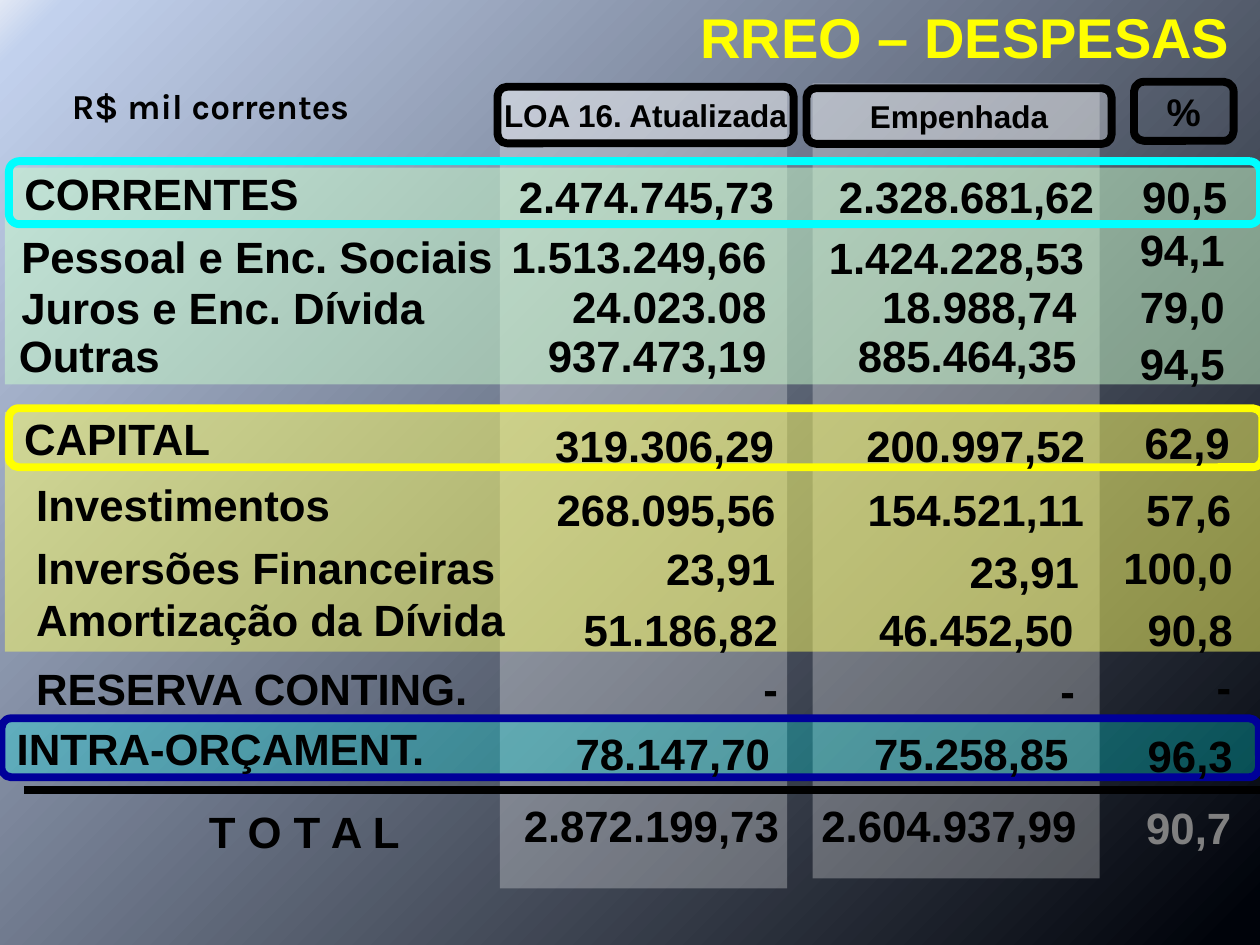
import pptx
import pptx.dml.color
import pptx.enum.shapes
import pptx.enum.text
import pptx.oxml
import pptx.oxml.ns
import pptx.util
from dataclasses import dataclass
from lxml import etree

Cm, Pt = pptx.util.Cm, pptx.util.Pt
SHAPE = pptx.enum.shapes.MSO_SHAPE
ANCHOR = pptx.enum.text.MSO_ANCHOR
ALIGN = pptx.enum.text.PP_ALIGN
qn = pptx.oxml.ns.qn


@dataclass(frozen=True)
class Theme:
    font: str = "Arial"
    unit_font: str = "Karla"
    title_size: int = 32
    body_size: int = 25
    percent_size: int = 22
    unit_size: int = 20
    header_size: int = 18
    border: float = 4.5
    ink: str = "000000"
    muted: str = "808080"
    yellow: str = "FFFF00"
    cyan: str = "00FFFF"
    navy: str = "000099"
    white: str = "FFFFFF"
    green_band: str = "CCFFCC"
    yellow_band: str = "FFFF66"
    background: tuple = ((2, "00030A"), (97, "C2D1ED"), (100, "E1E8F5"))


T = Theme()
LINE_H = 1.32                    # height of one line of body text
LABEL_W = 10.36
VALUE_WIDTHS = (6.2, 6.2, 2.9)   # LOA, Empenhada, %


def rgb(value):
    return pptx.dml.color.RGBColor.from_string(value)


def write(sp, text, size, align=ALIGN.LEFT, color=T.ink, font=T.font,
          anchor=ANCHOR.TOP, wrap=True):
    tf = sp.text_frame
    tf.word_wrap = wrap
    tf.vertical_anchor = anchor
    p = tf.paragraphs[0]
    p.text = text
    p.alignment = align
    p.font.name, p.font.size, p.font.bold = font, Pt(size), True
    p.font.color.rgb = rgb(color)


def add_text(slide, box, text, size=T.body_size, **style):
    sp = slide.shapes.add_textbox(*map(Cm, box))
    write(sp, text, size, **style)


def add_box(slide, box, kind=SHAPE.RECTANGLE, fill=None, opacity=100, line=None):
    sp = slide.shapes.add_shape(kind, *map(Cm, box))
    sp.shadow.inherit = False
    if fill:
        sp.fill.solid()
        sp.fill.fore_color.rgb = rgb(fill)
        color = sp.fill._xPr.find(qn("a:solidFill"))[0]
        etree.SubElement(color, qn("a:alpha"), val=str(opacity * 1000))
    else:
        sp.fill.background()
    if line:
        sp.line.color.rgb = rgb(line)
        sp.line.width = Pt(T.border)
    else:
        sp.line.fill.background()
    return sp


def add_frame(slide, box, text, size=T.body_size, align=ALIGN.LEFT, **look):
    sp = add_box(slide, box, SHAPE.ROUNDED_RECTANGLE, **look)
    write(sp, text, size, align, anchor=ANCHOR.MIDDLE, wrap=False)


def add_values(slide, box, values, last_color=T.ink):
    """Each value is (text, right edge, top), measured from the box's corner."""
    colors = (T.ink, T.ink, last_color)
    for (text, right, top), width, color in zip(values, VALUE_WIDTHS, colors):
        add_text(slide, (box[0] + right - width, box[1] + top, width, LINE_H),
                 text, align=ALIGN.RIGHT, color=color)


def add_row(slide, box, label, label_at, values):
    x, y = label_at
    add_text(slide, (box[0] + x, box[1] + y, LABEL_W, LINE_H), label)
    add_values(slide, box, values)


def add_band(slide, box, fill, rows):
    add_box(slide, box, fill=fill, opacity=50)
    for row in rows:
        add_row(slide, box, *row)


def add_group_total(slide, box, label, values, last_color=T.ink, **look):
    add_frame(slide, box, label, **look)
    add_values(slide, box, values, last_color)


def add_column(slide, box, header, header_box):
    """Translucent strip with its heading, placed from the strip's corner."""
    add_box(slide, box, fill=T.white, opacity=28)
    x, y, w, h = header_box
    add_frame(slide, (box[0] + x, box[1] + y, w, h), header, T.header_size,
              ALIGN.CENTER, fill=T.white, opacity=28, line=T.ink)


def set_background(slide):
    slide.background.fill.gradient()
    grad = next(slide.element.iter(qn("a:gradFill")))
    stops = grad.find(qn("a:gsLst"))
    for stop in list(stops):
        stops.remove(stop)
    for pos, color in T.background:
        stop = etree.SubElement(stops, qn("a:gs"), pos=str(pos * 1000))
        etree.SubElement(stop, qn("a:srgbClr"), val=color)
    lin = grad.find(qn("a:lin"))
    lin.set("ang", str(225 * 60000))
    lin.set("scaled", "0")


def add_title(slide, box, text):
    title = slide.shapes.title
    title.left, title.top, title.width, title.height = map(Cm, box)
    write(title, text, T.title_size, ALIGN.RIGHT, T.yellow)


def add_rule(slide, x1, x2, y):
    rule = slide.shapes.add_connector(pptx.enum.shapes.MSO_CONNECTOR.STRAIGHT,
                                      Cm(x1), Cm(y), Cm(x2), Cm(y))
    rule.line.color.rgb = rgb(T.ink)
    rule.line.width = Pt(T.border)
    etree.SubElement(rule.element.spPr, qn("a:effectLst"))


def main():
    prs = pptx.Presentation()
    prs.slide_width, prs.slide_height = Cm(25.4), Cm(19.05)
    slide = prs.slides.add_slide(prs.slide_layouts[5])
    set_background(slide)
    add_title(slide, (3.1, -0.08, 21.95, 1.63), "RREO – DESPESAS")

    # Column strips and headings
    add_column(slide, (10.08, 1.7, 5.79, 16.21), "LOA 16. Atualizada",
               (-0.05, 0.05, 5.97, 1.14))
    add_column(slide, (16.38, 1.68, 5.79, 16.03), "Empenhada",
               (-0.12, 0.1, 6.15, 1.12))
    add_frame(slide, (22.86, 1.65, 2.01, 1.19), "%", T.percent_size,
              ALIGN.CENTER, line=T.ink)
    add_text(slide, (0.89, 1.57, 6.4, 1.12), "R$ mil correntes", T.unit_size,
             align=ALIGN.RIGHT, font=T.unit_font, wrap=False)
    add_rule(slide, 0.48, 25.43, 15.93)

    # Current expenses
    add_band(slide, (0.1, 3.38, 25.4, 4.37), T.green_band, [
        ("Pessoal e Enc. Sociais", (0.08, 1.12),
         [("1.513.249,66", 15.6, 1.12), ("1.424.228,53", 22, 1.14), ("94,1", 24.84, 0.99)]),
        ("Juros e Enc. Dívida", (0.08, 2.16),
         [("24.023.08", 15.6, 2.13), ("18.988,74", 21.85, 2.13), ("79,0", 24.84, 2.13)]),
        ("Outras", (0.03, 3.12),
         [("937.473,19", 15.6, 3.12), ("885.464,35", 21.85, 3.12), ("94,5", 24.84, 3.28)]),
    ])
    add_group_total(slide, (0.18, 3.25, 25.22, 1.27), "CORRENTES", [
        ("2.474.745,73", 15.67, 0.05), ("2.328.681,62", 22.12, 0.05), ("90,5", 24.81, 0.05),
    ], line=T.cyan)

    # Transfers within the budget
    add_group_total(slide, (0.03, 14.48, 25.35, 1.19), "INTRA-ORÇAMENT.", [
        ("78.147,70", 15.74, 0.05), ("75.258,85", 21.76, 0.05), ("96,3", 25.07, 0.08),
    ], fill=T.cyan, opacity=27, line=T.navy)

    # Capital expenses
    add_band(slide, (0.1, 8.31, 25.5, 4.83), T.yellow_band, [
        ("Investimentos", (0.38, 1.19),
         [("268.095,56", 15.78, 1.3), ("154.521,11", 22, 1.3), ("57,6", 24.97, 1.3)]),
        ("Inversões Financeiras", (0.38, 2.46),
         [("23,91", 15.78, 2.49), ("23,91", 21.9, 2.54), ("100,0", 25, 2.46)]),
        ("Amortização da Dívida", (0.38, 3.51),
         [("51.186,82", 15.83, 3.71), ("46.452,50", 21.79, 3.71), ("90,8", 25, 3.71)]),
    ])
    add_group_total(slide, (0.18, 8.23, 25.27, 1.19), "CAPITAL", [
        ("319.306,29", 15.67, 0.08), ("200.997,52", 21.94, 0.08), ("62,9", 24.86, 0.03),
    ], line=T.yellow)

    # Reserve and grand total
    add_row(slide, (0.48, 13.21), "RESERVA CONTING.", (0, 0),
            [("-", 15.45, 0), ("-", 21.44, 0.05), ("-", 24.59, -0.03)])
    add_group_total(slide, (0.84, 16.15, 10.59, 1.19), "T O T A L", [
        ("2.872.199,73", 15.11, -0.18), ("2.604.937,99", 21.11, -0.18), ("90,7", 24.23, -0.13),
    ], last_color=T.muted, align=ALIGN.CENTER)

    prs.save("out.pptx")


if __name__ == "__main__":
    main()
